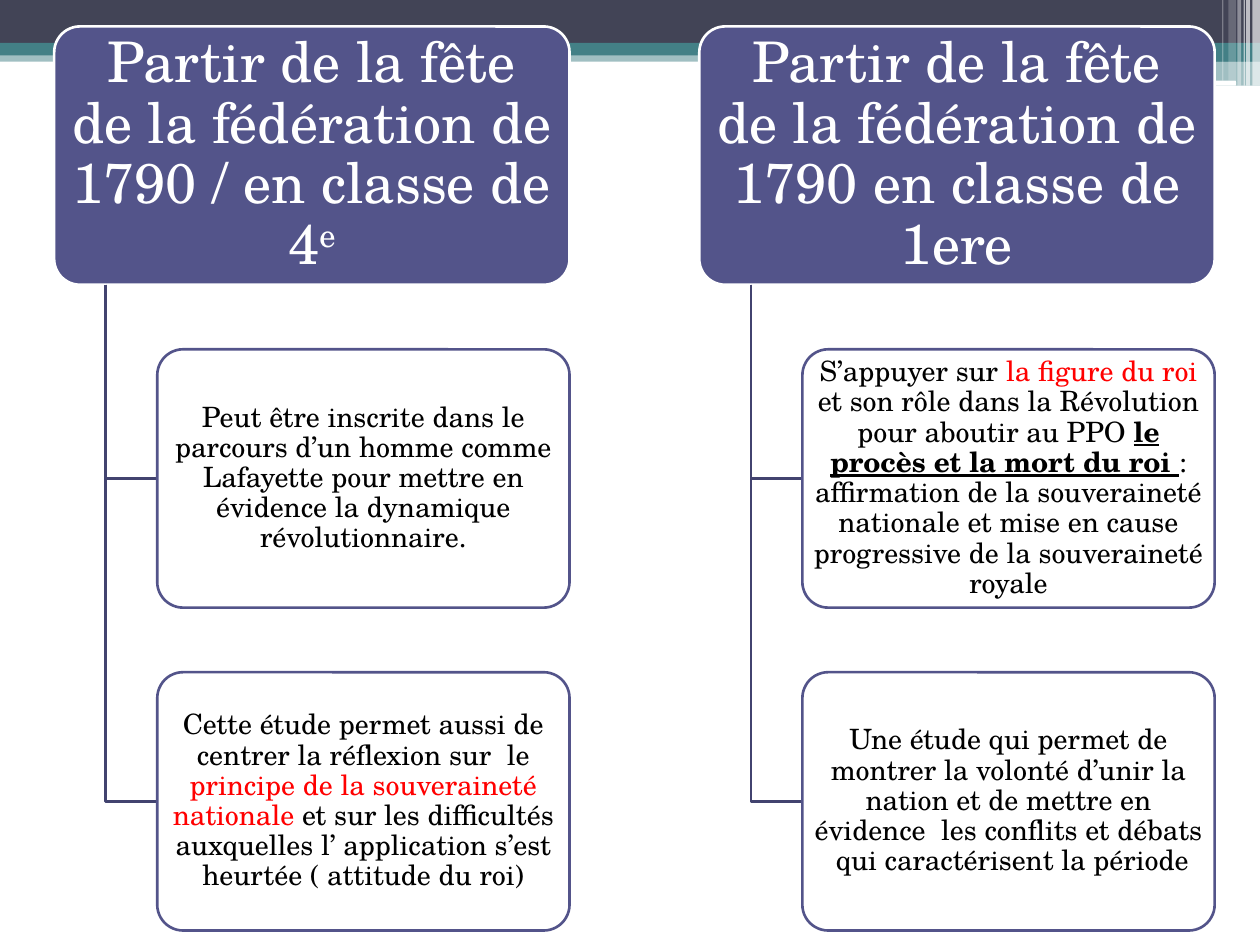
from lxml import etree
from pptx import Presentation
from pptx import util as u
from pptx.dml.color import RGBColor
from pptx.enum import shapes, text
from pptx.oxml.ns import qn

WHITE = RGBColor(0xFF, 0xFF, 0xFF)
BLACK = RGBColor(0, 0, 0)
RED = RGBColor(0xFF, 0, 0)
INDIGO = RGBColor(0x53, 0x54, 0x8A)
BRANCH = RGBColor(0x42, 0x43, 0x6F)
SLATE = RGBColor(0x42, 0x44, 0x56)
TEAL = RGBColor(0x43, 0x80, 0x86)
FONT = "TeX Gyre Schola"
RECT = shapes.MSO_SHAPE.RECTANGLE
ROUNDED = shapes.MSO_SHAPE.ROUNDED_RECTANGLE

# Grid of 100 columns by 75 rows; each tree is one column of boxes
TREE_LEFTS = (4.3, 55.5)
TOP, BOX_W, BOX_H = 2.1, 40.9, 20.5
ROW_STEP = BOX_H * 1.25
INDENT = BOX_W / 5

BANDS = [  # left, top, width, height, colour, opacity
    (0, 4, 100, 0.9, TEAL, 50),
    (0, 0, 100, 3.4, SLATE, 100),
    (0, 3.4, 100, 1, TEAL, 100),
    (59.2, 3.9, 40.8, 1, TEAL, 100),
    (59.2, 4.8, 40.8, 2, TEAL, 50),
]
STRIPES = [  # left, width, height, opacity
    (99.4, 0.6, 6.8, 65),
    (98.9, 0.3, 6.8, 65),
    (98.7, 0.1, 6.8, 60),
    (98.2, 0.3, 6.8, 40),
    (97.5, 0.6, 6.4, 20),
    (97, 0.1, 6.4, 30),
]
# Each text is a list of runs: (words, format)
TREES = [
    ([("Partir de la fête de la fédération de 1790 / en classe de 4", {}),
      ("e", {"superscript": True})],
     [[("Peut être inscrite dans le parcours d’un homme comme Lafayette pour "
        "mettre en évidence la dynamique révolutionnaire.", {})],
      [("Cette étude permet aussi de centrer la réflexion sur  le ", {}),
       ("principe de la souveraineté nationale", {"color": RED}),
       (" et sur les difficultés auxquelles l’ application s’est heurtée "
        "( attitude du roi)", {})]]),
    ([("Partir de la fête de la fédération de 1790 en classe de 1ere", {})],
     [[("S’appuyer sur ", {}),
       ("la figure du roi", {"color": RED}),
       (" et son rôle dans la Révolution pour aboutir au PPO ", {}),
       ("le procès et la mort du roi ", {"bold": True, "underline": True}),
       (": affirmation de la souveraineté nationale et mise en cause "
        "progressive de la souveraineté royale", {})],
      [("Une étude qui permet de montrer la volonté d’unir la nation et de "
        "mettre en évidence  les conflits et débats  qui caractérisent la "
        "période", {})]]),
]


def add_run(p, words, size, color, bold=False, underline=False,
            superscript=False):
    r = p.add_run()
    r.text = words
    r.font.name = FONT
    r.font.size = u.Pt(size)
    r.font.color.rgb = color
    r.font.bold = bold
    r.font.underline = underline
    if superscript:
        r.font._element.set("baseline", "30000")


class Deck:
    """Holds the presentation, the current slide and the grid unit."""

    def __init__(self):
        self.prs = Presentation()
        self.prs.slide_width = u.Inches(10)
        self.prs.slide_height = u.Inches(7.5)
        self.unit = self.prs.slide_width / 100
        self.slide = self.prs.slides.add_slide(self.prs.slide_layouts[6])

    def emu(self, *lengths):
        return [round(n * self.unit) for n in lengths]

    def block(self, kind, left, top, width, height, color, opacity=100,
              line=None):
        sp = self.slide.shapes.add_shape(
            kind, *self.emu(left, top, width, height))
        sp.shadow.inherit = False
        sp.fill.solid()
        sp.fill.fore_color.rgb = color
        if opacity < 100:
            clr = sp.fill._xPr.find(qn("a:solidFill"))[0]
            etree.SubElement(clr, qn("a:alpha"), val=str(opacity * 1000))
        if line is None:
            sp.line.fill.background()
        else:
            sp.line.color.rgb = line
            sp.line.width = u.Pt(1.5)
        return sp

    def box(self, left, top, width, runs, size, ink, fill, line, opacity=100,
            margins=(0.7, 0.4)):
        sp = self.block(ROUNDED, left, top, width, BOX_H, fill, opacity, line)
        sp.adjustments[0] = 0.1
        tf = sp.text_frame
        tf.word_wrap = True
        tf.vertical_anchor = text.MSO_ANCHOR.MIDDLE
        tf.margin_left = tf.margin_right = self.emu(margins[0])[0]
        tf.margin_top = tf.margin_bottom = self.emu(margins[1])[0]
        p = tf.paragraphs[0]
        p.alignment = text.PP_ALIGN.CENTER
        p.line_spacing = 0.9
        for words, style in runs:
            add_run(p, words, size, **{"color": ink, **style})

    def elbow(self, x, y, end_x, end_y):
        fb = self.slide.shapes.build_freeform(*self.emu(x, y))
        fb.add_line_segments(
            [self.emu(x, end_y), self.emu(end_x, end_y)], close=False)
        sp = fb.convert_to_shape()
        sp.shadow.inherit = False
        sp.fill.background()
        sp.line.color.rgb = BRANCH
        sp.line.width = u.Pt(1.5)

    def tree(self, left, heading, details):
        self.box(left, TOP, BOX_W, heading, 32, WHITE, INDIGO, WHITE)
        for row, runs in enumerate(details, start=1):
            top = TOP + row * ROW_STEP
            self.elbow(left + INDENT / 2, TOP + BOX_H,
                       left + INDENT, top + BOX_H / 2)
            self.box(left + INDENT, top, BOX_W - INDENT, runs, 16, BLACK,
                     WHITE, INDIGO, opacity=90, margins=(0.3, 0.2))


def main():
    deck = Deck()
    for band in BANDS:
        deck.block(RECT, *band)
    deck.block(ROUNDED, 80.6, 6.4, 17.5, 0.4, WHITE)
    for left, width, height, opacity in STRIPES:
        deck.block(RECT, left, 0, width, height, WHITE, opacity)
    for left, (heading, details) in zip(TREE_LEFTS, TREES):
        deck.tree(left, heading, details)
    deck.prs.save("out.pptx")


if __name__ == "__main__":
    main()
